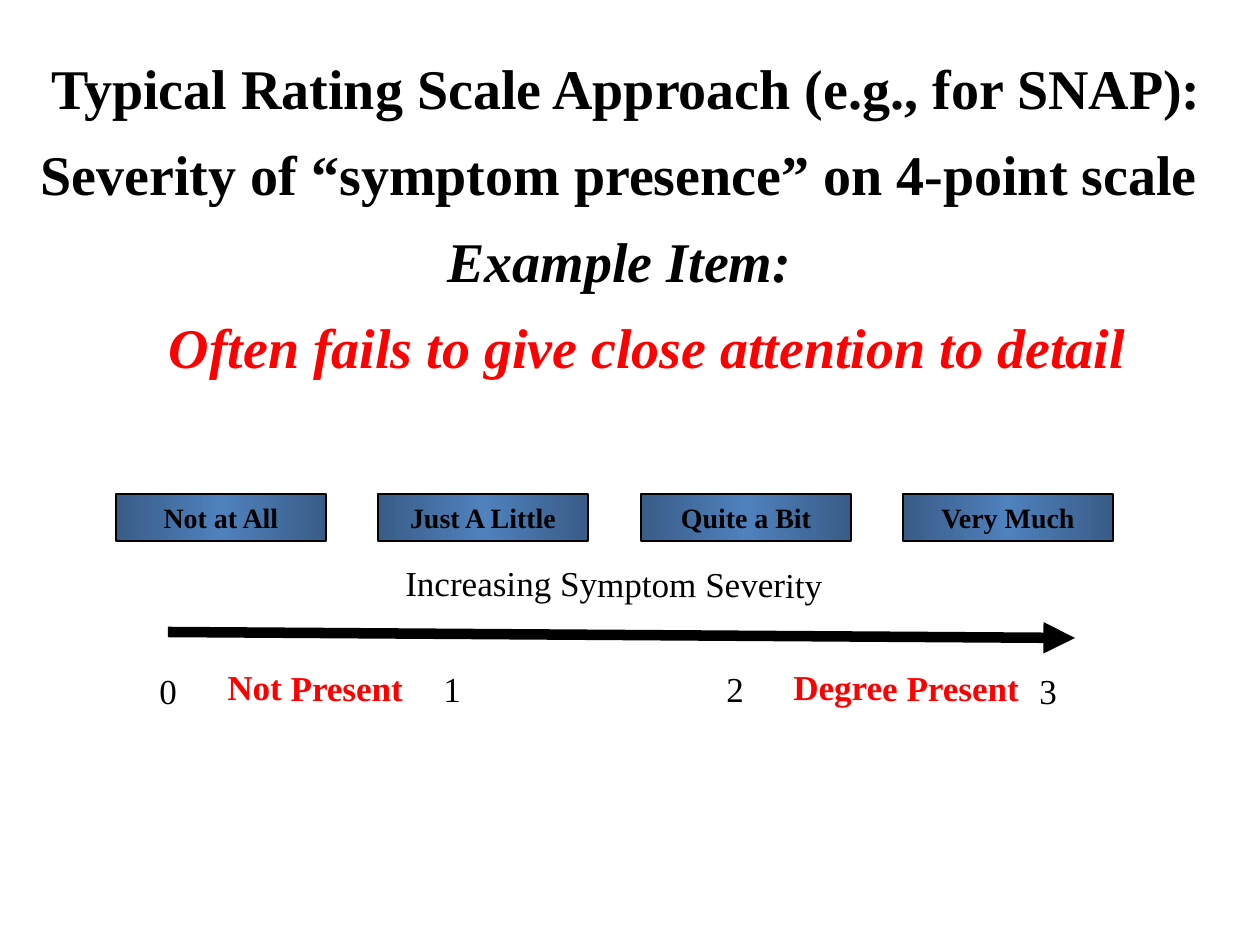
from lxml.etree import SubElement
from pptx import Presentation
from pptx.dml.color import RGBColor
from pptx.enum.shapes import MSO_CONNECTOR, MSO_SHAPE
from pptx.enum.text import MSO_ANCHOR, MSO_AUTO_SIZE, PP_ALIGN
from pptx.oxml.ns import qn
from pptx.util import Pt

PX = 914400 / 126
BLACK = RGBColor(0x00, 0x00, 0x00)
RED = RGBColor(0xFF, 0x00, 0x00)
BLUE = RGBColor(0x4F, 0x81, 0xBD)
DARK_BLUE = RGBColor(0x39, 0x5C, 0x87)


def px(*lengths):
    return [round(length * PX) for length in lengths]


def write(paragraph, text, **formats):
    run = paragraph.add_run()
    run.text = text
    settings = {"name": "Times New Roman", "size": Pt(20), **formats}
    color = settings.pop("color", BLACK)
    for key, value in settings.items():
        setattr(run.font, key, value)
    run.font.color.rgb = color


presentation = Presentation()
presentation.slide_width, presentation.slide_height = px(1260, 945)
slide = presentation.slides.add_slide(presentation.slide_layouts[6])

# Title and example item: text, left indent, italic, colour
title_lines = [
    ("Typical Rating Scale Approach (e.g., for SNAP):", 14, False, BLACK),
    ("Severity of “symptom presence” on 4-point scale", 0, False, BLACK),
    ("Example Item:", 0, True, BLACK),
    ("Often fails to give close attention to detail", 56, True, RED),
]
title = slide.shapes.add_textbox(*px(23, 44, 1193, 345))
frame = title.text_frame
frame.word_wrap = True
frame.vertical_anchor = MSO_ANCHOR.MIDDLE
for index, (text, indent, italic, color) in enumerate(title_lines):
    paragraph = frame.add_paragraph() if index else frame.paragraphs[0]
    paragraph.alignment = PP_ALIGN.CENTER
    if index:
        paragraph.space_before = Pt(11)
    if indent:
        paragraph._p.get_or_add_pPr().set("marL", str(px(indent)[0]))
    write(paragraph, text, size=Pt(32), bold=True, italic=italic, color=color)

# Rating boxes, evenly spaced
for index, text in enumerate(["Not at All", "Just A Little", "Quite a Bit", "Very Much"]):
    box = slide.shapes.add_shape(
        MSO_SHAPE.RECTANGLE, *px(116 + index * 525 // 2, 494, 210, 47))
    box.shadow.inherit = False
    box.fill.gradient()
    box.fill.gradient_angle = 0
    stops = box.fill._fill._gradFill.gsLst
    for stop in list(stops):
        stops.remove(stop)
    for position, color in ((0, DARK_BLUE), (50000, BLUE), (100000, DARK_BLUE)):
        stop = SubElement(stops, qn("a:gs"), pos=str(position))
        SubElement(stop, qn("a:srgbClr"), val=str(color))
    box.line.color.rgb = BLACK
    box.line.width = Pt(0.75)
    frame = box.text_frame
    frame.word_wrap = True
    frame.vertical_anchor = MSO_ANCHOR.MIDDLE
    frame.paragraphs[0].alignment = PP_ALIGN.CENTER
    write(frame.paragraphs[0], text, size=Pt(16), bold=True)

# Severity arrow
x1, y1, x2, y2 = px(168, 632, 1075, 638)
arrow = slide.shapes.add_connector(MSO_CONNECTOR.STRAIGHT, x1, y1, x2, y2)
arrow.line.color.rgb = BLACK
arrow.line.width = Pt(6)
SubElement(arrow.line._get_or_add_ln(), qn("a:tailEnd"), type="triangle")
SubElement(arrow._element.spPr, qn("a:effectLst"))

# Arrow labels: text, left, top, width, rotation, bold, colour
labels = [
    ("Increasing Symptom Severity", 393, 556, 480, 0.3, False, BLACK),
    ("0", 147, 663, 45, 0, False, BLACK),
    ("1", 431, 661, 45, 0, False, BLACK),
    ("2", 714, 661, 45, 0, False, BLACK),
    ("3", 1027, 663, 45, 0, False, BLACK),
    ("Not Present", 215, 660, 203, 0.3, True, RED),
    ("Degree Present", 781, 660, 253, 0.3, True, RED),
]
for text, left, top, width, rotation, bold, color in labels:
    label = slide.shapes.add_textbox(*px(left, top, width, 55))
    label.rotation = rotation
    label.text_frame.word_wrap = False
    label.text_frame.auto_size = MSO_AUTO_SIZE.SHAPE_TO_FIT_TEXT
    paragraph = label.text_frame.paragraphs[0]
    paragraph.alignment = PP_ALIGN.LEFT
    write(paragraph, text, bold=bold, color=color)

presentation.save("out.pptx")
